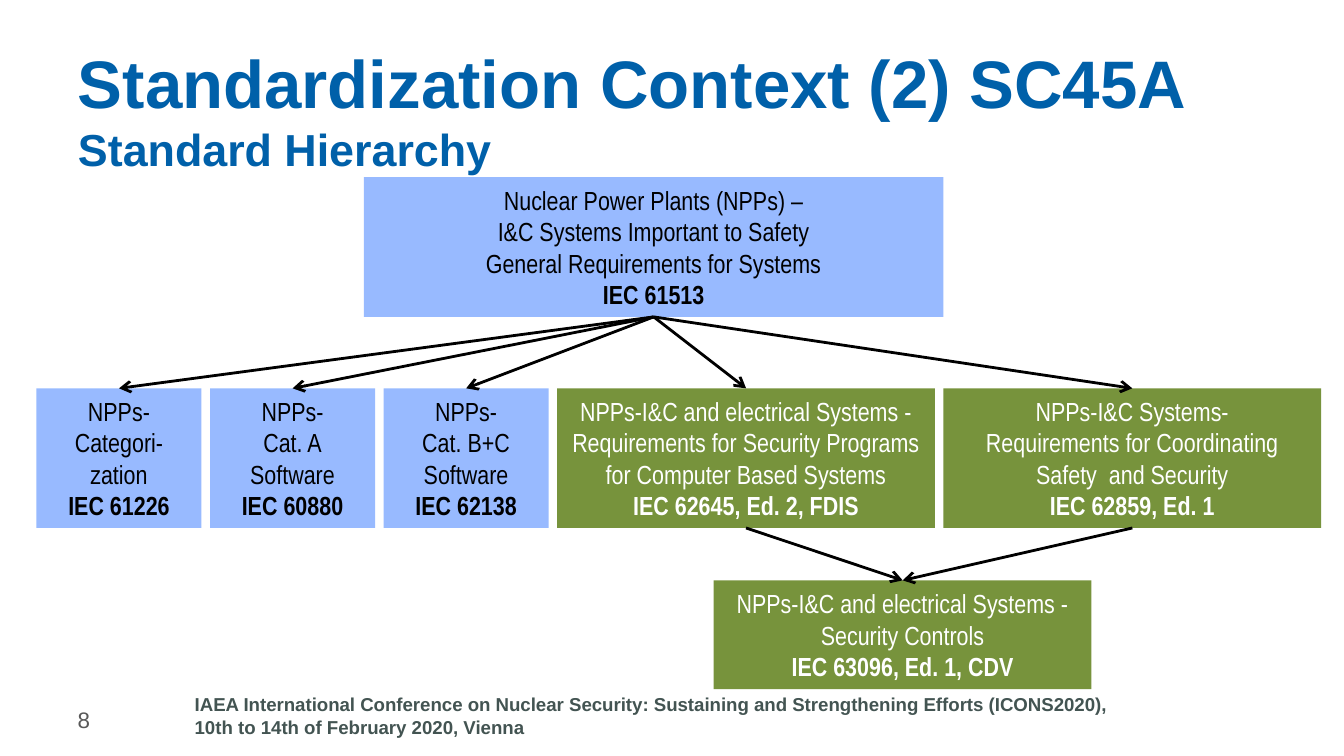
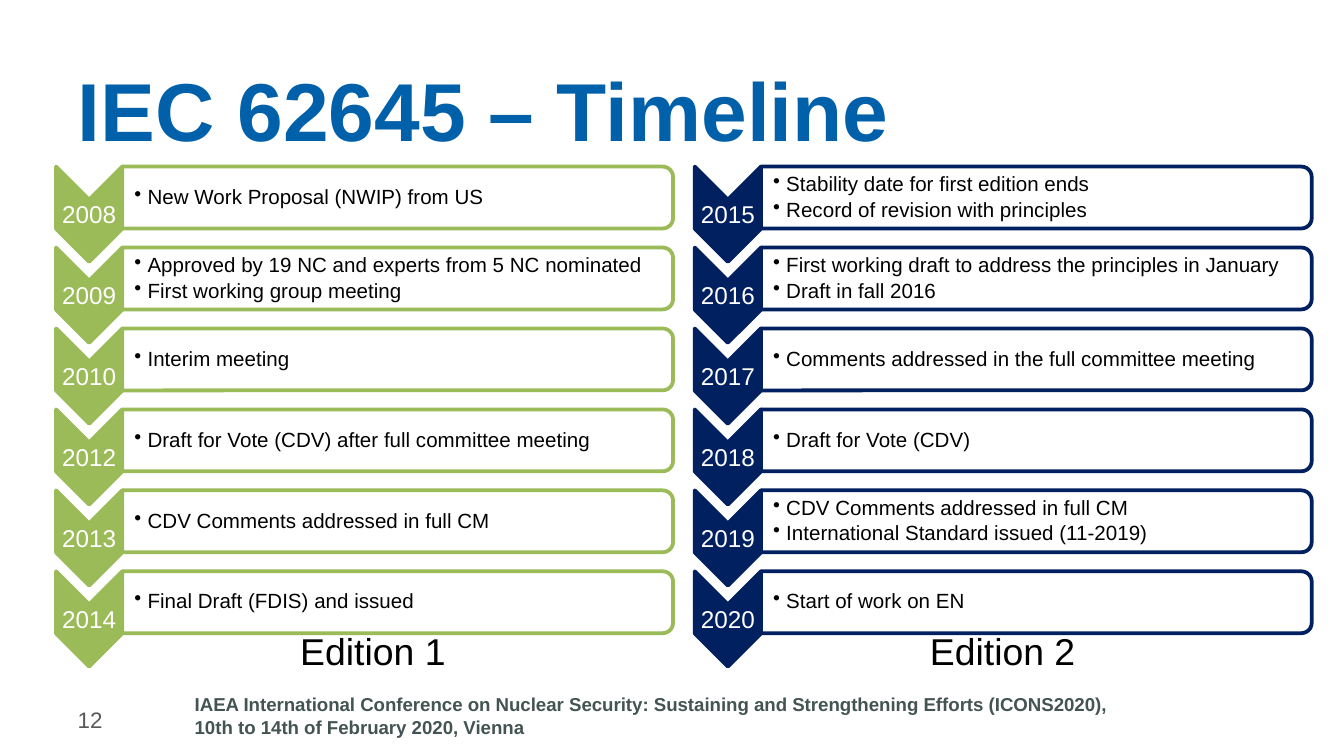
"""Build two slides on the IEC 62645 standard: its hierarchy and its timeline."""
import lxml.etree
import pptx
import pptx.dml.color
import pptx.enum.dml
import pptx.enum.shapes
import pptx.enum.text
import pptx.oxml.ns
import pptx.util

Cm = pptx.util.Cm
Pt = pptx.util.Pt
RGB = pptx.dml.color.RGBColor
SHAPE = pptx.enum.shapes.MSO_SHAPE
ALIGN = pptx.enum.text.PP_ALIGN
ANCHOR = pptx.enum.text.MSO_ANCHOR
qn = pptx.oxml.ns.qn

TITLE_BLUE = RGB(0x00, 0x60, 0xA9)
FOOTER_GREY = RGB(0x43, 0x54, 0x52)
NUMBER_GREY = RGB(0x59, 0x59, 0x59)
SAFETY_BLUE = RGB(0x98, 0xBA, 0xFF)
SECURITY_GREEN = RGB(0x77, 0x93, 0x3C)
EDITION_GREEN = RGB(0x9B, 0xBB, 0x59)
EDITION_NAVY = RGB(0x00, 0x20, 0x60)
BLACK = RGB(0, 0, 0)
WHITE = RGB(255, 255, 255)

FOOTER = ["IAEA International Conference on Nuclear Security: Sustaining and "
          "Strengthening Efforts (ICONS2020),",
          "10th to 14th of February 2020, Vienna"]

TILE_TOP, TILE_HEIGHT, TILE_GAP = 7.34, 2.64, 0.16
NARROW, WIDE = 3.12, 7.14
TILES = [
    (NARROW, SAFETY_BLUE, ["NPPs-", "Categori-zation", "IEC 61226"]),
    (NARROW, SAFETY_BLUE, ["NPPs-", "Cat. A", "Software", "IEC 60880"]),
    (NARROW, SAFETY_BLUE, ["NPPs-", "Cat. B+C", "Software", "IEC 62138"]),
    (WIDE, SECURITY_GREEN,
     ["NPPs-I&C and electrical Systems -",
      "Requirements for Security Programs for Computer Based Systems",
      "IEC 62645, Ed. 2, FDIS"]),
    (WIDE, SECURITY_GREEN,
     ["NPPs-I&C Systems-",
      "Requirements for Coordinating Safety  and Security",
      "IEC 62859, Ed. 1"]),
]

ROW_TOP, ROW_PITCH = 3.15, 1.53
EDITION_1 = [
    ("2008", ["New Work Proposal (NWIP) from US"]),
    ("2009", ["Approved by 19 NC and experts from 5 NC nominated",
              "First working group meeting"]),
    ("2010", ["Interim meeting"]),
    ("2012", ["Draft for Vote (CDV) after full committee meeting"]),
    ("2013", ["CDV Comments addressed in full CM"]),
    ("2014", ["Final Draft (FDIS) and issued"]),
]
EDITION_2 = [
    ("2015", ["Stability date for first edition ends",
              "Record of revision with principles"]),
    ("2016", ["First working draft to address the principles in January",
              "Draft in fall 2016"]),
    ("2017", ["Comments addressed in the full committee meeting"]),
    ("2018", ["Draft for Vote (CDV)"]),
    ("2019", ["CDV Comments addressed in full CM",
              "International Standard issued (11-2019)"]),
    ("2020", ["Start of work on EN"]),
]


def set_font(font, size, color, bold=False, name="Arial"):
    font.size, font.bold, font.name = Pt(size), bold, name
    font.color.rgb = color


def add_text(s, box, lines, size, color, bold=False, align=ALIGN.LEFT,
             anchor=ANCHOR.MIDDLE, insets=None):
    sp = s.shapes.add_textbox(*map(Cm, box))
    tf = sp.text_frame
    tf.word_wrap = True
    tf.vertical_anchor = anchor
    if insets:
        (tf.margin_left, tf.margin_top,
         tf.margin_right, tf.margin_bottom) = map(Cm, insets)
    tf.text = "\n".join(lines)
    for p in tf.paragraphs:
        p.alignment = align
        set_font(p.font, size, color, bold)
    return tf


def add_slide(prs, number, title_runs):
    s = prs.slides.add_slide(prs.slide_layouts[5])
    title = s.shapes.title
    title.left, title.top, title.width, title.height = map(
        Cm, (1.22, 0.38, 23.65, 3.35))
    tf = title.text_frame
    tf.auto_size = pptx.enum.text.MSO_AUTO_SIZE.NONE
    tf.vertical_anchor = ANCHOR.MIDDLE
    p = tf.paragraphs[0]
    p.alignment = ALIGN.LEFT
    for text, size in title_runs:
        r = p.add_run()
        r.text = text
        set_font(r.font, size, TITLE_BLUE, True)
    add_text(s, (3.43, 12.98, 19.86, 1.12), FOOTER, 10, FOOTER_GREY, True,
             anchor=ANCHOR.TOP)
    add_text(s, (1.22, 13.23, 2.21, 0.76), [number], 12, NUMBER_GREY)
    return s


def add_tile(s, box, fill, lines):
    sp = s.shapes.add_shape(SHAPE.RECTANGLE, *map(Cm, box))
    sp.shadow.inherit = False
    sp.fill.solid()
    sp.fill.fore_color.rgb = fill
    sp.line.fill.background()
    p = sp.text_frame.paragraphs[0]
    p.alignment = ALIGN.CENTER
    color = BLACK if fill == SAFETY_BLUE else WHITE
    set_font(p.font, 14, color, name="Arial Narrow")
    for line in lines:
        if p.runs:
            p.add_line_break()
        r = p.add_run()
        r.text = line
        set_font(r.font, 14, color, line == lines[-1], "Arial Narrow")
    return sp


def add_arrow(s, parent, child):
    cx = s.shapes.add_connector(
        pptx.enum.shapes.MSO_CONNECTOR.STRAIGHT, 0, 0, 0, 0)
    cx.begin_connect(parent, 2)
    cx.end_connect(child, 0)
    cx.line.color.rgb = BLACK
    cx.line.width = Pt(1.5)
    ln = cx.line._get_or_add_ln()
    lxml.etree.SubElement(ln, qn("a:tailEnd"), type="arrow")
    lxml.etree.SubElement(cx._element.spPr, qn("a:effectLst"))


def add_turned(s, kind, box, fill, line):
    """Add a shape turned 90 degrees so that it fills the given box."""
    x, y, w, h = box
    sp = s.shapes.add_shape(kind, Cm(x + (w - h) / 2), Cm(y + (h - w) / 2),
                            Cm(h), Cm(w))
    sp.rotation = 90
    sp.shadow.inherit = False
    sp.fill.solid()
    sp.fill.fore_color.rgb = fill
    sp.line.color.rgb = line
    sp.line.width = Pt(2)
    return sp


def add_bullets(s, box, lines):
    tf = add_text(s, box, lines, 11, BLACK, insets=(0.23, 0.03, 0.03, 0.03))
    for p in tf.paragraphs:
        p.line_spacing = 0.9
        if p.text != lines[-1]:
            p.space_after = Pt(2)
        pPr = p._p.get_or_add_pPr()
        pPr.set("marL", str(Cm(0.25)))
        pPr.set("indent", str(-Cm(0.25)))
        bullet = lxml.etree.Element(qn("a:buChar"), char="•")
        pPr.find(qn("a:defRPr")).addprevious(bullet)


def add_timeline(s, left, color, label, label_center, rows):
    add_text(s, (label_center - 3, 11.79, 6, 1), [label], 20, BLACK,
             align=ALIGN.CENTER)
    for i, (year, events) in enumerate(rows):
        y = ROW_TOP + i * ROW_PITCH
        add_turned(s, SHAPE.CHEVRON, (left, y, 1.25, 1.8), color, color)
        add_text(s, (left, y + 0.63, 1.25, 0.54), [year], 13, WHITE,
                 align=ALIGN.CENTER, insets=[0.02] * 4)
        add_turned(s, SHAPE.ROUND_2_SAME_RECTANGLE,
                   (left + 1.25, y, 10.41, 1.17), WHITE, color)
        add_bullets(s, (left + 1.25, y + 0.06, 10.36, 1.05), events)


def hierarchy(prs):
    s = add_slide(prs, "8", [("Standardization Context (2) SC45A ", 36),
                             ("Standard Hierarchy", 24)])
    general = add_tile(s, (6.88, 3.35, 10.95, TILE_HEIGHT), SAFETY_BLUE,
                       ["Nuclear Power Plants (NPPs) –",
                        "I&C Systems Important to Safety",
                        "General Requirements for Systems", "IEC 61513"])
    tiles = []
    x = 0.69
    for width, fill, lines in TILES:
        tiles.append(add_tile(s, (x, TILE_TOP, width, TILE_HEIGHT), fill, lines))
        x += width + TILE_GAP
    controls = add_tile(s, (13.49, 10.97, WIDE, 2.06), SECURITY_GREEN,
                        ["NPPs-I&C and electrical Systems -",
                         "Security Controls", "IEC 63096, Ed. 1, CDV"])
    for tile in tiles:
        add_arrow(s, general, tile)
    for tile in tiles[3:]:
        add_arrow(s, tile, controls)


def timeline(prs):
    s = add_slide(prs, "12", [("IEC 62645 – Timeline", 44)])
    add_timeline(s, 1.06, EDITION_GREEN, "Edition 1", 7.05, EDITION_1)
    add_timeline(s, 13.13, EDITION_NAVY, "Edition 2", 18.95, EDITION_2)


def main():
    prs = pptx.Presentation()
    prs.slide_width, prs.slide_height = Cm(25.4), Cm(14.29)
    hierarchy(prs)
    timeline(prs)
    prs.save("out.pptx")


if __name__ == "__main__":
    main()
